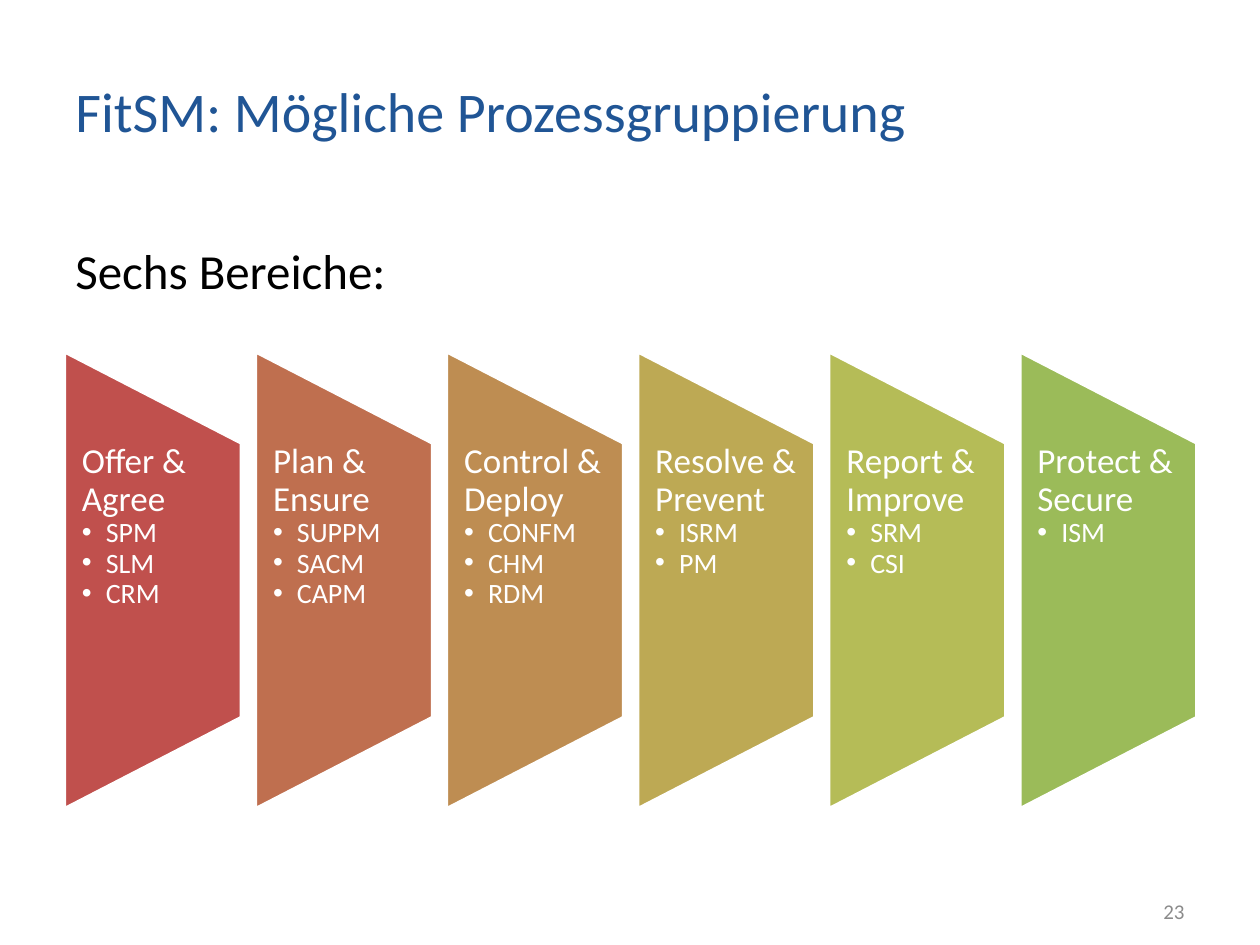
import pptx
import pptx.dml.color
import pptx.enum.shapes
import pptx.enum.text
import pptx.oxml
import pptx.oxml.ns
import pptx.util

Inches = pptx.util.Inches
Pt = pptx.util.Pt
ANCHOR = pptx.enum.text.MSO_ANCHOR
ALIGN = pptx.enum.text.PP_ALIGN

WIDTH, HEIGHT = 10, 7.5
MARGIN = 0.05 * WIDTH
FONT = "Calibri"
WHITE = "FFFFFF"
GROUPS = [
    ("Offer & Agree", ["SPM", "SLM", "CRM"], "C0504D"),
    ("Plan & Ensure", ["SUPPM", "SACM", "CAPM"], "BF6F4F"),
    ("Control & Deploy", ["CONFM", "CHM", "RDM"], "BE8D52"),
    ("Resolve & Prevent", ["ISRM", "PM"], "BDA954"),
    ("Report & Improve", ["SRM", "CSI"], "B5BC57"),
    ("Protect & Secure", ["ISM"], "9BBB59"),
]


def rgb(value):
    return pptx.dml.color.RGBColor.from_string(value)


def add_bullet(para, color, indent=0.19):
    properties = para._p.get_or_add_pPr()
    properties.set("marL", str(Inches(indent)))
    properties.set("indent", str(-Inches(indent)))
    namespace = pptx.oxml.ns.nsdecls("a")
    for xml in (
        f'<a:buClr {namespace}><a:srgbClr val="{color}"/></a:buClr>',
        f'<a:buFont {namespace} typeface="Arial"/>',
        f'<a:buChar {namespace} char="•"/>',
    ):
        properties.append(pptx.oxml.parse_xml(xml))


def write(frame, text, size, color, align=ALIGN.LEFT, spacing=None, bullet=False):
    """Fill the first paragraph of the frame, or add one after it."""
    para = frame.paragraphs[0]
    if para.runs:
        para = frame.add_paragraph()
    if bullet:
        para.level = 1
        add_bullet(para, color)
    para.alignment = align
    para.line_spacing = spacing
    span = para.add_run()
    span.text = text
    span.font.name = FONT
    span.font.size = Pt(size)
    span.font.color.rgb = rgb(color)


def add_text(page, box, text, size, color, anchor=ANCHOR.TOP, align=ALIGN.LEFT):
    frame = page.shapes.add_textbox(*map(Inches, box)).text_frame
    frame.word_wrap = True
    frame.vertical_anchor = anchor
    write(frame, text, size, color, align)


def add_group(page, box, heading, processes, fill):
    """Turn a trapezoid on its side so that it stands in the box, with upright text."""
    left, top, width, height = box
    shift = (height - width) / 2
    shape = page.shapes.add_shape(
        pptx.enum.shapes.MSO_SHAPE.FLOWCHART_MANUAL_OPERATION,
        *map(Inches, (left - shift, top + shift, height, width)),
    )
    shape.rotation = 270
    shape.shadow.inherit = False
    shape.fill.solid()
    shape.fill.fore_color.rgb = rgb(fill)
    shape.line.color.rgb = rgb(WHITE)
    shape.line.width = Pt(2)

    frame = shape.text_frame
    frame._txBody.bodyPr.set("vert", "vert")
    frame.word_wrap = True
    frame.vertical_anchor = ANCHOR.TOP
    frame.margin_left = frame.margin_right = 0
    frame.margin_top = frame.margin_bottom = Inches(0.14)
    write(frame, heading, 20, WHITE, spacing=0.9)
    for process in processes:
        write(frame, process, 16, WHITE, spacing=0.9, bullet=True)


def add_groups(page, box, gap):
    left, top, width, height = box
    column = (width - gap * (len(GROUPS) - 1)) / len(GROUPS)
    for index, group in enumerate(GROUPS):
        add_group(page, (left + index * (column + gap), top, column, height), *group)


def main():
    deck = pptx.Presentation()
    deck.slide_width, deck.slide_height = Inches(WIDTH), Inches(HEIGHT)
    page = deck.slides.add_slide(deck.slide_layouts[6])
    content = WIDTH - 2 * MARGIN
    add_text(page, (MARGIN, 0.3, 8.04, 1.15), "FitSM: Mögliche Prozessgruppierung",
             32, "205595", anchor=ANCHOR.MIDDLE)
    add_text(page, (MARGIN, 1.86, content, 5.06), "Sechs Bereiche:", 28, "000000")
    add_text(page, (WIDTH - MARGIN - 2.33, 7.03, 2.33, 0.4), "23", 12, "8B8B8B",
             anchor=ANCHOR.MIDDLE, align=ALIGN.RIGHT)
    add_groups(page, (MARGIN + 0.01, 2.79, content - 0.01, 3.63), gap=0.11)
    deck.save("out.pptx")


if __name__ == "__main__":
    main()
